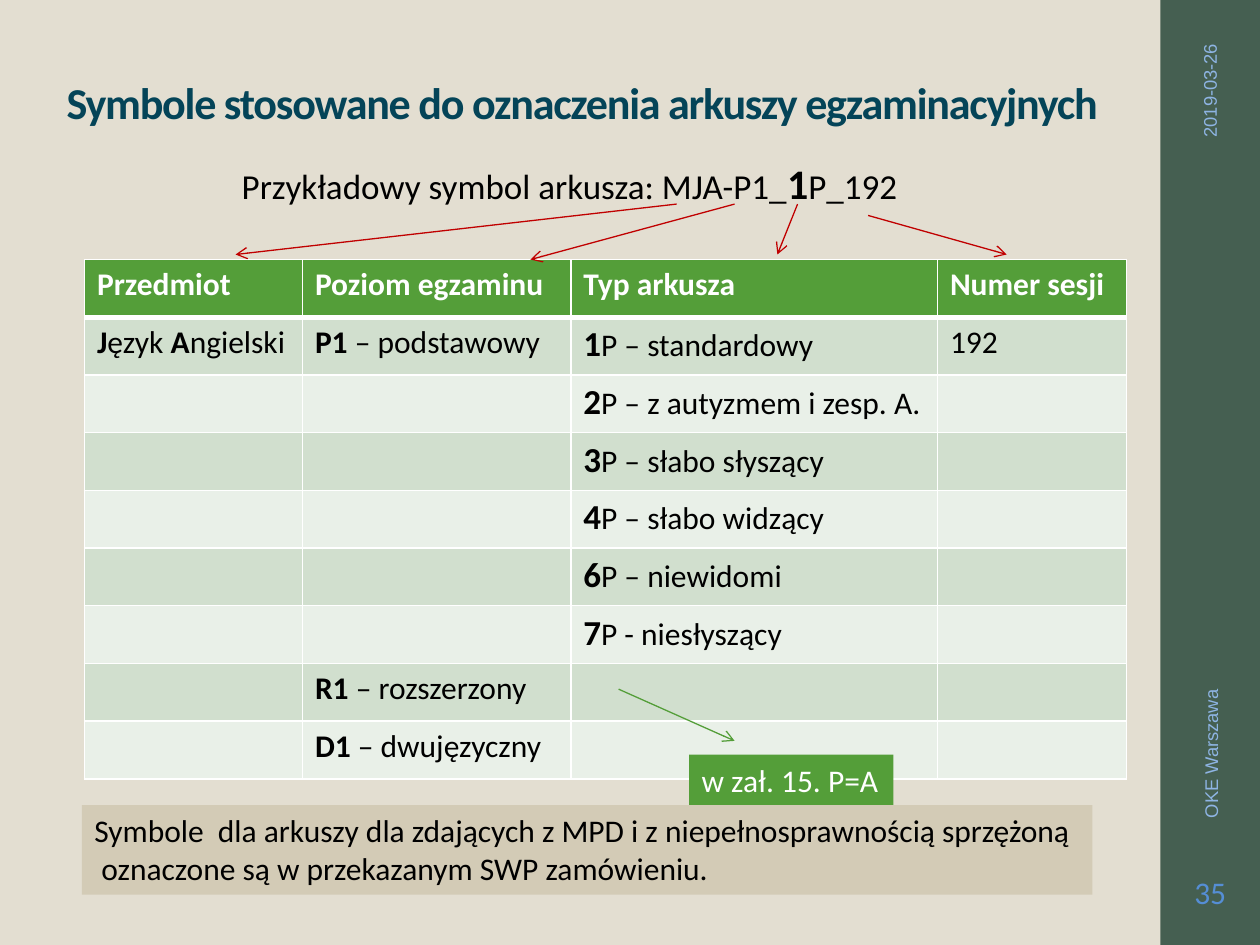
from lxml import etree
from pptx import Presentation
from pptx import util as u
from pptx.dml.color import RGBColor
from pptx.enum import shapes, text
from pptx.oxml.ns import qn

COLUMNS, ROWS = 100, 75  # slide grid: one step is a tenth of an inch
GREEN, RED, WHITE, BLACK = "549E39", "C00000", "FFFFFF", "000000"
BANDS = ("D1DFCE", "E9F0E8")
LEFT, CENTER, RIGHT = text.PP_ALIGN.LEFT, text.PP_ALIGN.CENTER, text.PP_ALIGN.RIGHT
INSETS = (1, 0.5)


def color(value):
    return RGBColor.from_string(value)


class SlideBuilder:
    font = "Calibri"
    size = 18

    def __init__(self, presentation, background):
        self.column = presentation.slide_width / COLUMNS
        self.row = presentation.slide_height / ROWS
        self.slide = presentation.slides.add_slide(presentation.slide_layouts[6])
        self.slide.background.fill.solid()
        self.slide.background.fill.fore_color.rgb = color(background)

    def x(self, columns):
        return u.Emu(round(columns * self.column))

    def y(self, rows):
        return u.Emu(round(rows * self.row))

    def frame(self, left, top, width, height):
        return self.x(left), self.y(top), self.x(width), self.y(height)

    def fill_paragraph(self, paragraph, content, ink=BLACK, size=None, font=None,
                       bold=False, strong_size=None, align=LEFT):
        """Fill a paragraph; parts between asterisks are bold."""
        paragraph.alignment = align
        style = paragraph.font
        style.name, style.size = font or self.font, u.Pt(size or self.size)
        style.color.rgb, style.bold = color(ink), bold
        for index, part in enumerate(content.split("*")):
            if part:
                run = paragraph.add_run()
                run.text = part
                if index % 2:
                    run.font.bold = True
                    if strong_size:
                        run.font.size = u.Pt(strong_size)

    def fill_text(self, shape, lines, anchor, insets, wrap, **style):
        frame = shape.text_frame
        frame.word_wrap, frame.vertical_anchor = wrap, anchor
        frame.margin_left = frame.margin_right = self.x(insets[0])
        frame.margin_top = frame.margin_bottom = self.y(insets[1])
        for index, line in enumerate(lines):
            paragraph = frame.add_paragraph() if index else frame.paragraphs[0]
            self.fill_paragraph(paragraph, line, **style)

    def label(self, area, content, anchor=text.MSO_ANCHOR.MIDDLE, insets=INSETS,
              wrap=True, rotation=0, **style):
        box = self.slide.shapes.add_textbox(*self.frame(*area))
        box.rotation = rotation
        self.fill_text(box, [content], anchor, insets, wrap, **style)
        return box.text_frame.paragraphs[0]

    def panel(self, area, fill, lines=(), **style):
        shape = self.slide.shapes.add_shape(
            shapes.MSO_SHAPE.RECTANGLE, *self.frame(*area))
        shape.shadow.inherit = False
        shape.fill.solid()
        shape.fill.fore_color.rgb = color(fill)
        shape.line.fill.background()
        self.fill_text(shape, lines, text.MSO_ANCHOR.TOP, INSETS, False, **style)

    def arrow(self, start, end, ink):
        line = self.slide.shapes.add_connector(
            shapes.MSO_CONNECTOR.STRAIGHT, self.x(start[0]), self.y(start[1]),
            self.x(end[0]), self.y(end[1]))
        line.line.color.rgb = color(ink)
        line.line.width = u.Pt(0.75)
        outline = line._element.spPr.find(qn("a:ln"))
        etree.SubElement(outline, qn("a:tailEnd"), type="arrow")
        etree.SubElement(line._element.spPr, qn("a:effectLst"))

    def border(self, cell, side, points):
        line = etree.SubElement(cell._tc.get_or_add_tcPr(), qn("a:ln" + side),
                                w=str(u.Pt(points)))
        fill = etree.SubElement(line, qn("a:solidFill"))
        etree.SubElement(fill, qn("a:srgbClr"), val=WHITE)

    def table(self, left, top, widths, row_height, rows):
        area = self.frame(left, top, sum(widths), row_height * len(rows))
        table = self.slide.shapes.add_table(len(rows), len(widths), *area).table
        for column, width in zip(table.columns, widths):
            column.width = self.x(width)
        for r, contents in enumerate(rows):
            header = r == 0
            table.rows[r].height = self.y(row_height)
            for c, content in enumerate(contents):
                cell = table.cell(r, c)
                for side in "LRTB":
                    heavy = (r, side) in ((0, "B"), (1, "T"))
                    self.border(cell, side, 3 if heavy else 1)
                cell.fill.solid()
                cell.fill.fore_color.rgb = color(GREEN if header else BANDS[(r - 1) % 2])
                self.fill_paragraph(cell.text_frame.paragraphs[0], content,
                                    ink=WHITE if header else BLACK, bold=header,
                                    strong_size=20 if c == 2 else None)


def main():
    presentation = Presentation()
    presentation.slide_width, presentation.slide_height = u.Inches(10), u.Inches(7.5)
    builder = SlideBuilder(presentation, "E3DED1")

    # Side bar with date, footer and slide number
    builder.panel((92.1, 0, 7.9, 75), "455F51")
    small = dict(rotation=270, size=10.5, font="Arial", ink="8EB4E3")
    builder.label((85.6, 11.4, 20.8, 3), "2019-03-26", align=RIGHT, **small)
    builder.label((76.5, 44.8, 39.2, 3), "OKE Warszawa", **small)
    builder.label((92.3, 67.5, 7.5, 6.5), "35", insets=(0.3, 0.5),
                  ink="558ED5", align=CENTER)

    # Title
    title = builder.label((4.3, 4, 85.5, 6.7),
                          "Symbole stosowane do oznaczenia arkuszy egzaminacyjnych",
                          anchor=text.MSO_ANCHOR.BOTTOM, size=25.2,
                          ink="044458", bold=True)
    title.line_spacing = 0.9
    title.runs[0].font._element.set("spc", "-70")

    # Table of symbols
    builder.table(6.7, 20.6, (17.3, 21.3, 29.1, 15), 4.58, [
        ("Przedmiot", "Poziom egzaminu", "Typ arkusza", "Numer sesji"),
        ("*J*ęzyk *A*ngielski", "*P1* – podstawowy", "*1*P – standardowy", "192"),
        ("", "", "*2*P – z autyzmem i zesp. A.", ""),
        ("", "", "*3*P – słabo słyszący", ""),
        ("", "", "*4*P – słabo widzący", ""),
        ("", "", "*6*P – niewidomi", ""),
        ("", "", "*7*P - niesłyszący", ""),
        ("", "*R1* – rozszerzony", "", ""),
        ("", "*D1* – dwujęzyczny", "", ""),
    ])

    # Example symbol, with arrows to the table columns
    builder.label((18.2, 12, 54.5, 5), "Przykładowy symbol arkusza: MJA-P1_*1*P_192",
                  anchor=text.MSO_ANCHOR.TOP, wrap=False, size=20, strong_size=24)
    for start, end in (((53.7, 16.2), (18.7, 20.2)), ((58.3, 16.2), (42.1, 20.6)),
                       ((63.3, 16.2), (61.7, 20.2)), ((68.9, 17.1), (79.9, 20.2))):
        builder.arrow(start, end, RED)

    # Notes under the table
    builder.arrow((49.1, 54.7), (58.3, 58.8), GREEN)
    builder.panel((54.7, 59.9, 16.2, 4), GREEN, ["w zał. 15. P=A"], ink=WHITE)
    builder.panel((6.5, 63.9, 80.2, 7.1), "D3CBB6", [
        "Symbole  dla arkuszy dla zdających z MPD i z niepełnosprawnością sprzężoną",
        " oznaczone są w przekazanym SWP zamówieniu."])

    presentation.save("out.pptx")


if __name__ == "__main__":
    main()
